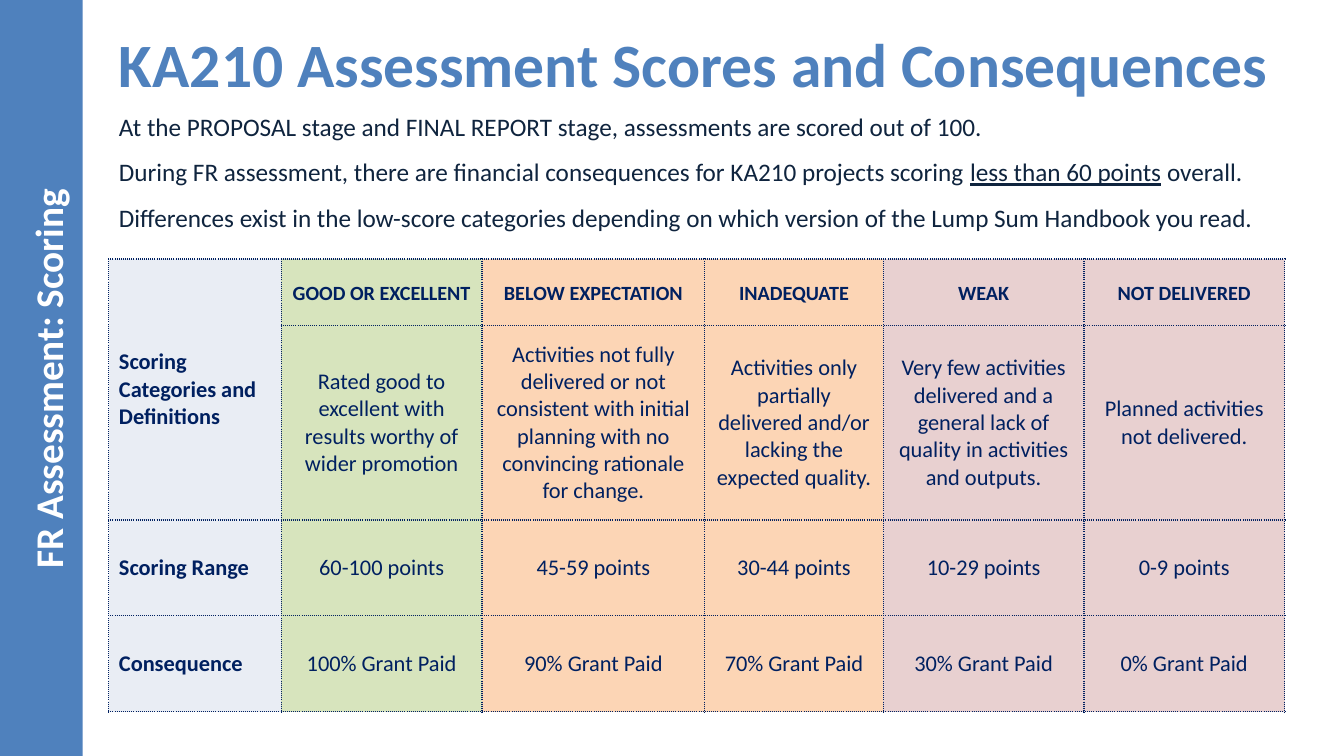
from dataclasses import dataclass
from typing import Any

from lxml.etree import SubElement
from pptx import Presentation
from pptx.dml.color import RGBColor
from pptx.enum.shapes import MSO_SHAPE as Shape
from pptx.enum.text import MSO_ANCHOR as Anchor, MSO_AUTO_SIZE as AutoSize, PP_ALIGN as Align
from pptx.oxml import parse_xml
from pptx.oxml.ns import nsdecls, qn
from pptx.util import Inches, Pt

PAGE_WIDTH, PAGE_HEIGHT = Inches(13.33), Inches(7.5)
FONT = "Calibri"
BLUE, NAVY, INK, WHITE = "4F81BD", "002060", "0F243E", "FFFFFF"
PALE, GREEN, ORANGE, PINK = "E9EDF4", "D7E4BD", "FCD5B5", "E8D0D0"


@dataclass(frozen=True)
class Area:
    """A rectangle in percent of the slide's width and height."""
    left: float
    top: float
    width: float
    height: float


@dataclass(frozen=True)
class Category:
    width: float
    color: str
    name: str
    definition: str
    points: str
    consequence: str


SIDEBAR = Area(-25.2, 44.5, 56.4, 11.2)
TITLE = Area(8.1, 2.8, 89.2, 11.2)
INTRO = Area(8.1, 14, 87.4, 17.5)
TABLE = Area(8.1, 34.27, 87.4, 59.87)
LABEL_WIDTH = 12.83
ROW_HEIGHTS = (8.8, 25.73, 12.67, 12.67)
ROW_LABELS = ("Scoring Categories and Definitions", "", "Scoring Range", "Consequence")

INTRO_LINES = (
    ("At the PROPOSAL stage and FINAL REPORT stage, assessments are scored out of 100.",),
    ("During FR assessment, there are financial consequences for KA210 projects scoring ",
     "less than 60 points", " overall."),
    ("Differences exist in the low-score categories depending on which version of the "
     "Lump Sum Handbook you read.",),
)

CATEGORIES = (
    Category(14.93, GREEN, "good or excellent",
             "Rated good to excellent with results worthy of wider promotion",
             "60-100 points", "100% Grant Paid"),
    Category(16.58, ORANGE, "below expectation",
             "Activities not fully delivered or not consistent with initial planning "
             "with no convincing rationale for change.",
             "45-59 points", "90% Grant Paid"),
    Category(13.28, ORANGE, "inadequate",
             "Activities only partially delivered and/or lacking the expected quality.",
             "30-44 points", "70% Grant Paid"),
    Category(14.93, PINK, "weak",
             "Very few activities delivered and a general lack of quality in activities "
             "and outputs.",
             "10-29 points", "30% Grant Paid"),
    Category(14.93, PINK, "not delivered", "Planned activities not delivered.",
             "0-9 points", "0% Grant Paid"),
)


def across(percent: float) -> int:
    return round(PAGE_WIDTH * percent / 100)


def down(percent: float) -> int:
    return round(PAGE_HEIGHT * percent / 100)


def bounds(area: Area) -> tuple[int, int, int, int]:
    return across(area.left), down(area.top), across(area.width), down(area.height)


def paint(color_format: Any, color: str) -> None:
    color_format.rgb = RGBColor.from_string(color)


def fill_solid(item: Any, color: str) -> None:
    item.fill.solid()
    paint(item.fill.fore_color, color)


def apply(item: Any, values: dict[str, Any]) -> None:
    for name, value in values.items():
        setattr(item, name, value)


def add_span(para: Any, text: str, size: float, color: str, **values: Any) -> Any:
    span = para.add_run()
    span.text = text
    apply(span.font, {"name": FONT, "size": Pt(size), **values})
    paint(span.font.color, color)
    return span


def place(box: Any, area: Area) -> Any:
    """Move a placeholder and make its text start at the top; return its text frame."""
    apply(box, dict(zip(("left", "top", "width", "height"), bounds(area))))
    frame = box.text_frame
    apply(frame, {"word_wrap": True, "auto_size": AutoSize.NONE, "vertical_anchor": Anchor.TOP})
    return frame


def add_sidebar(page: Any) -> None:
    bar = page.shapes.add_shape(Shape.RECTANGLE, *bounds(SIDEBAR))
    bar.rotation = 270
    bar.shadow.inherit = False
    bar.line.fill.background()
    fill_solid(bar, BLUE)
    apply(bar.text_frame, {"margin_top": Inches(0.19), "vertical_anchor": Anchor.MIDDLE})
    para = bar.text_frame.paragraphs[0]
    para.alignment = Align.CENTER
    add_span(para, "FR Assessment: Scoring", 28, WHITE, bold=True)


def fill_title(page: Any) -> None:
    para = place(page.shapes.title, TITLE).paragraphs[0]
    para.alignment = Align.LEFT
    add_span(para, "KA210 Assessment Scores and Consequences", 44, BLUE, bold=True)


def fill_intro(page: Any) -> None:
    frame = place(page.placeholders[1], INTRO)
    for number, parts in enumerate(INTRO_LINES):
        para = frame.add_paragraph() if number else frame.paragraphs[0]
        para.space_before = Pt(11 if number else 0)
        properties = para._p.get_or_add_pPr()
        apply_indent = {"marL": "0", "indent": "0"}
        for name, value in apply_indent.items():
            properties.set(name, value)
        SubElement(properties, qn("a:buNone"))
        for position, part in enumerate(parts):
            add_span(para, part, 18, INK, underline=position == 1)


def add_borders(cell: Any) -> None:
    properties = cell._tc.get_or_add_tcPr()
    for index, side in enumerate("LRTB"):
        properties.insert(index, parse_xml(
            f'<a:ln{side} {nsdecls("a")} w="{Pt(1)}"><a:solidFill><a:srgbClr val="{NAVY}"/>'
            f'</a:solidFill><a:prstDash val="sysDot"/></a:ln{side}>'))


def fill_cell(cell: Any, text: str, color: str, label: bool = False, heading: bool = False) -> None:
    cell.vertical_anchor = Anchor.MIDDLE
    fill_solid(cell, color)
    add_borders(cell)
    if not text:
        return
    para = cell.text_frame.paragraphs[0]
    para.alignment = Align.LEFT if label else Align.CENTER
    span = add_span(para, text, 18 if heading else 16, NAVY, bold=label or heading)
    if heading:
        para.line_spacing = 0.9
        span.font._element.set("cap", "small")


def add_scores(page: Any) -> None:
    table = page.shapes.add_table(len(ROW_HEIGHTS), len(CATEGORIES) + 1, *bounds(TABLE)).table
    apply(table, {"first_row": False, "horz_banding": False})
    widths = (LABEL_WIDTH, *(category.width for category in CATEGORIES))
    for column, width in zip(table.columns, widths):
        column.width = across(width)
    for row, height in zip(table.rows, ROW_HEIGHTS):
        row.height = down(height)
    for row, label in enumerate(ROW_LABELS):
        fill_cell(table.cell(row, 0), label, PALE, label=True)
    for column, category in enumerate(CATEGORIES, start=1):
        texts = (category.name, category.definition, category.points, category.consequence)
        for row, text in enumerate(texts):
            fill_cell(table.cell(row, column), text, category.color, heading=row == 0)
    table.cell(0, 0).merge(table.cell(1, 0))


def main() -> None:
    deck = Presentation()
    apply(deck, {"slide_width": PAGE_WIDTH, "slide_height": PAGE_HEIGHT})
    page = deck.slides.add_slide(deck.slide_layouts[1])
    add_sidebar(page)
    fill_title(page)
    fill_intro(page)
    add_scores(page)
    deck.save("out.pptx")


if __name__ == "__main__":
    main()
